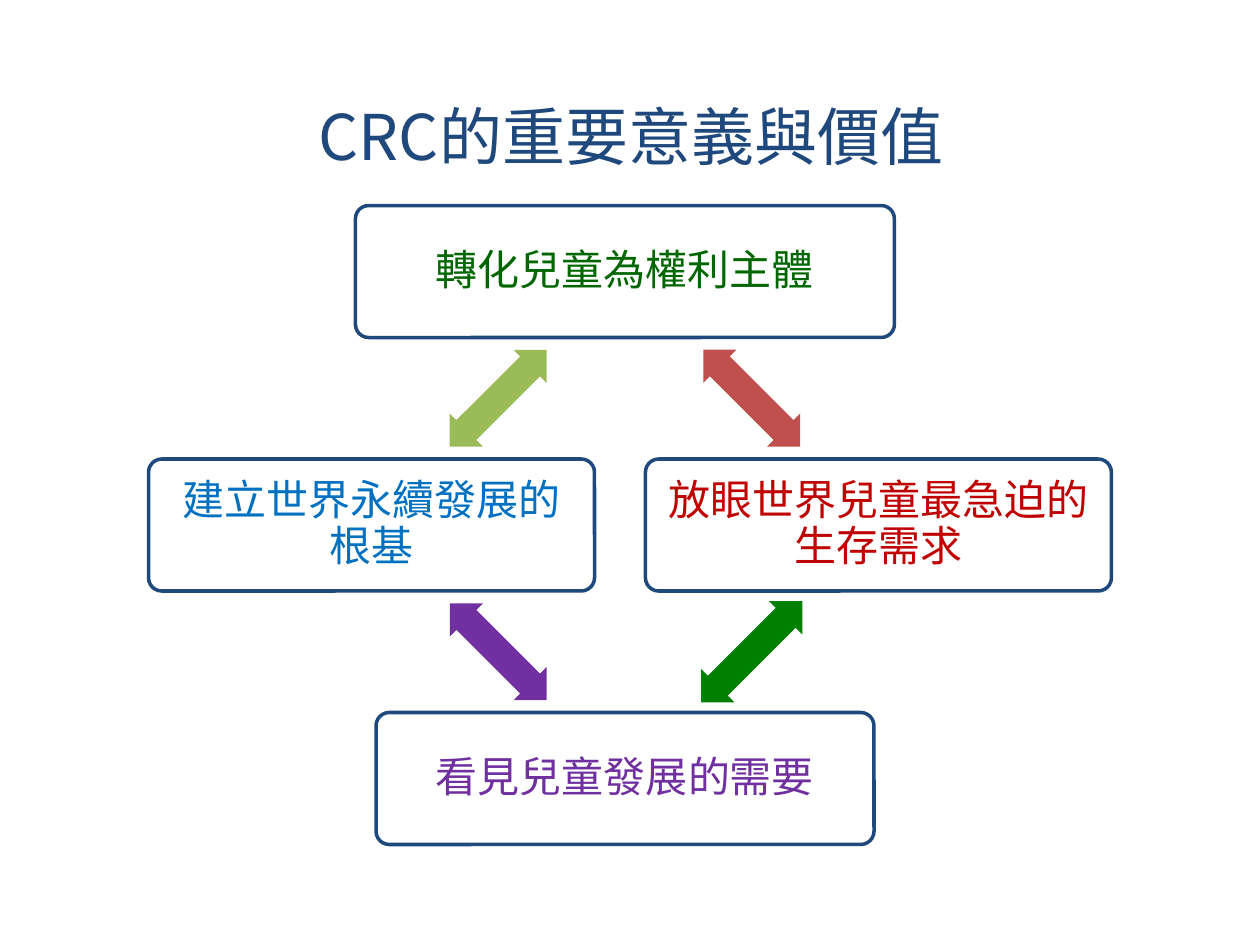
from pptx import Presentation
from pptx import util as u
from pptx.dml.color import RGBColor
from pptx.enum import shapes, text
from pptx.oxml.ns import qn
from lxml import etree

THEME = {
    "font": "Noto Sans CJK SC",
    "title": 36, "body": 24, "edge": 2,
    "navy": "1F497D", "white": "FFFFFF",
}
TITLE = "CRC的重要意義與價值"
BOXES = [
    ("轉化兒童為權利主體", "006600", 0, -1, 539),
    ("放眼世界兒童最急迫的生存需求", "C00000", 1, 0, 466),
    ("看見兒童發展的需要", "7030A0", 0, 1, 498),
    ("建立世界永續發展的根基", "0070C0", -1, 0, 446),
]
ARROWS = [
    ("C0504D", 137), ("008000", 143), ("7030A0", 137), ("9BBB59", 137),
]
MID_X, MID_Y, STEP = 625, 525, 253.5
BOX_H, ARROW_H, INSET = 132, 47, 13


def px(n):
    return u.Emu(round(n * 914400 / 126))


def color(name):
    return RGBColor.from_string(THEME.get(name, name))


def write(frame, words, size, ink):
    frame.word_wrap = True
    frame.vertical_anchor = text.MSO_ANCHOR.MIDDLE
    para = frame.paragraphs[0]
    para.text = words
    para.alignment = text.PP_ALIGN.CENTER
    font = para.font
    font.name, font.size = THEME["font"], u.Pt(THEME[size])
    font.color.rgb = color(ink)
    props = para.runs[0].font
    props.name = THEME["font"]
    latin = para.runs[0]._r.rPr.find(qn("a:latin"))
    east = etree.Element(qn("a:ea"), typeface=THEME["font"])
    latin.addnext(east)
    return para


def draw(slide, kind, mid, size, fill, adjust):
    x, y = mid
    w, h = size
    shape = slide.shapes.add_shape(
        kind, px(x - w / 2), px(y - h / 2), px(w), px(h))
    shape.shadow.inherit = False
    shape.fill.solid()
    shape.fill.fore_color.rgb = color(fill)
    for i, value in enumerate(adjust):
        shape.adjustments[i] = value
    return shape


def add_box(slide, words, ink, mid, width):
    box = draw(slide, shapes.MSO_SHAPE.ROUNDED_RECTANGLE,
               mid, (width, BOX_H), "white", [0.1])
    box.line.color.rgb = color("navy")
    box.line.width = u.Pt(THEME["edge"])
    frame = box.text_frame
    frame.margin_left = frame.margin_right = px(INSET)
    frame.margin_top = frame.margin_bottom = px(INSET)
    para = write(frame, words, "body", ink)
    para.line_spacing = 0.9
    para.space_after = u.Pt(8.4)


def main():
    deck = Presentation()
    deck.slide_width, deck.slide_height = u.Inches(10), u.Inches(7.5)
    slide = deck.slides.add_slide(deck.slide_layouts[5])
    title = slide.shapes.title
    title.left, title.top = px(64), px(57)
    title.width, title.height = px(1134), px(157)
    write(title.text_frame, TITLE, "title", "navy")

    mids = [(MID_X + col * STEP, MID_Y + row * STEP)
            for _, _, col, row, _ in BOXES]
    for (words, ink, _, _, width), mid in zip(BOXES, mids):
        add_box(slide, words, ink, mid, width)
    for i, (fill, width) in enumerate(ARROWS):
        ends = zip(mids[i], mids[(i + 1) % len(mids)])
        mid = [(a + b) / 2 for a, b in ends]
        arrow = draw(slide, shapes.MSO_SHAPE.LEFT_RIGHT_ARROW,
                     mid, (width, ARROW_H), fill, [0.6, 0.5])
        arrow.line.fill.background()
        arrow.rotation = 45 + 90 * i
    deck.save("out.pptx")


if __name__ == "__main__":
    main()
